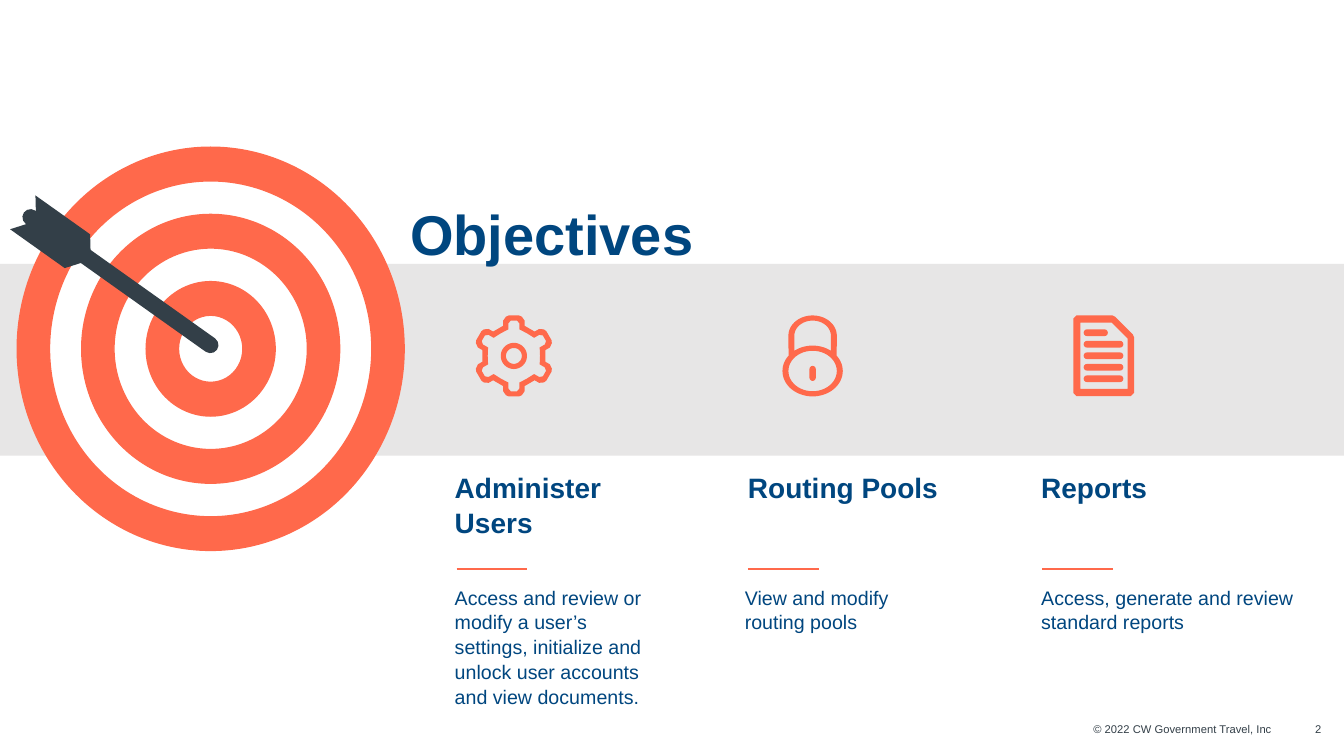
from dataclasses import dataclass
from math import cos, radians, sin

from lxml.etree import SubElement
from pptx import Presentation
from pptx.dml.color import RGBColor
from pptx.enum.shapes import MSO_CONNECTOR, MSO_SHAPE
from pptx.enum.text import PP_ALIGN
from pptx.oxml.ns import qn
from pptx.util import Cm, Pt


@dataclass(frozen=True)
class Theme:
    navy = RGBColor.from_string("00467F")
    coral = RGBColor.from_string("FF694B")
    slate = RGBColor.from_string("333F48")
    gray = RGBColor.from_string("E7E6E6")
    white = RGBColor.from_string("FFFFFF")
    font = "Arial"
    title = Pt(40)
    head = Pt(20)
    body = Pt(14)
    foot = Pt(8)


theme = Theme()
deck = Presentation()
deck.slide_width, deck.slide_height = Cm(33.87), Cm(19.05)
slide = deck.slides.add_slide(deck.slide_layouts[6])
shapes = slide.shapes


def write(text, left, top, width, height, size, color=theme.navy,
          bold=False, align=PP_ALIGN.LEFT, pitch=1.05):
    box = shapes.add_textbox(Cm(left), Cm(top), Cm(width), Cm(height))
    frame = box.text_frame
    frame.word_wrap = True
    frame.margin_left = frame.margin_right = 0
    frame.margin_top = frame.margin_bottom = 0
    para = frame.paragraphs[0]
    para.alignment = align
    para.line_spacing = pitch
    run = para.add_run()
    run.text = text
    run.font.name, run.font.size, run.font.bold = theme.font, size, bold
    run.font.color.rgb = color


def arc(mid_x, mid_y, wide, high, start, end):
    steps = 48
    turns = [radians(start + (end - start) * i / steps) for i in range(steps + 1)]
    return [(mid_x + wide * cos(t), mid_y + high * sin(t)) for t in turns]


# Footer
for text, left, width in [("© 2022 CW Government Travel, Inc", 21.29, 10.76),
                          ("2", 32.72, 0.58)]:
    write(text, left, 18.21, width, 0.36, theme.foot, theme.slate,
          align=PP_ALIGN.RIGHT, pitch=1)

# Preset parts: kind, left, top, width, height, fill, rim, adjustment, turn, flips
parts = [(MSO_SHAPE.RECTANGLE, 0, 6.65, 33.87, 4.83, theme.gray, None, None, 0, ())]

# Target rings, from the outside in
for ring in range(6, 0, -1):
    wide, high = 9.75 * ring / 6, 10.16 * ring / 6
    fill = theme.white if ring % 2 else theme.coral
    parts.append((MSO_SHAPE.OVAL, 5.31 - wide / 2, 8.79 - high / 2, wide, high,
                  fill, theme.coral, None, 0, ()))

# Arrow: shaft and two feathers
tilt = 35.4
parts += [
    (MSO_SHAPE.ROUNDED_RECTANGLE, 0.05, 6.88, 5.97, 0.41,
     theme.slate, None, 0.5, tilt, ()),
    (MSO_SHAPE.PARALLELOGRAM, 0.61, 5.46, 1.96, 0.36,
     theme.slate, None, 0.75, tilt, ("flipH",)),
    (MSO_SHAPE.PARALLELOGRAM, 0.18, 6.02, 1.96, 0.36,
     theme.slate, None, 0.75, tilt, ("flipH", "flipV")),
]

# Keyhole and the text bars of the report icon
pills = [(20.4, 9.22, 0.16, 0.38)]
pills += [(27.31, 8.3 + 0.29 * row, 1 if row else 0.61, 0.17) for row in range(5)]
parts += [(MSO_SHAPE.ROUNDED_RECTANGLE, *pill, theme.coral, None, 0.5, 0, ())
          for pill in pills]

for kind, left, top, width, height, fill, rim, bend, turn, flips in parts:
    part = shapes.add_shape(kind, Cm(left), Cm(top), Cm(width), Cm(height))
    part.shadow.inherit = False
    part.fill.solid()
    part.fill.fore_color.rgb = fill
    if rim:
        part.line.color.rgb = rim
        part.line.width = Pt(1)
    else:
        part.line.fill.background()
    if bend:
        part.adjustments[0] = bend
    part.rotation = turn
    for flip in flips:
        part.element.spPr.get_or_add_xfrm().set(flip, "1")

# Gear outline: one half tooth, mirrored, then turned six times
hub_x, hub_y = 12.95, 8.97
gear = []
for half in [[(-0.27, -0.76), (-0.27, -0.89), (-0.2, -0.99), (-0.13, -1.02)],
             [(-0.33, -0.57), (-0.14, -0.67), (-0.14, -0.82), (-0.08, -0.89)]]:
    tooth = half + [(-x, y) for x, y in reversed(half)]
    gear.append([(hub_x + x * cos(t) - y * sin(t), hub_y + x * sin(t) + y * cos(t))
                 for t in (radians(60 * i) for i in range(6)) for x, y in tooth])
gear += [arc(hub_x, hub_y, r, r, 0, 360) for r in (0.33, 0.2)]

# Lock: silhouette, gap under the shackle, face
lock_x = 20.48
lock = [
    arc(lock_x, 8.46, 0.61, 0.51, 180, 360) + arc(lock_x, 9.35, 0.76, 0.64, -37, 217),
    arc(lock_x, 8.46, 0.46, 0.38, 180, 360) + arc(lock_x, 9.35, 0.76, 0.64, -53, -127),
    arc(lock_x, 9.35, 0.61, 0.51, 0, 360),
]

# Report: sheet edge and inside
sheet = [
    [(27.13, 7.95), (28.04, 7.95), (28.1, 7.98), (28.55, 8.43), (28.58, 8.5),
     (28.58, 9.9), (28.5, 9.98), (27.13, 9.98), (27.05, 9.9), (27.05, 8.03)],
    [(27.23, 8.13), (28.02, 8.13), (28.42, 8.53), (28.42, 9.8), (27.23, 9.8)],
]

for icon in (gear, lock, sheet):
    loops = [[(Cm(x), Cm(y)) for x, y in loop] for loop in icon]
    pen = shapes.build_freeform(*loops[0][0])
    pen.add_line_segments(loops[0][1:], close=True)
    for loop in loops[1:]:
        pen.move_to(*loop[0])
        pen.add_line_segments(loop[1:], close=True)
    form = pen.convert_to_shape()
    form.shadow.inherit = False
    form.fill.solid()
    form.fill.fore_color.rgb = theme.coral
    form.line.fill.background()

# Title
write("Objectives", 10.34, 4.95, 9.96, 1.32, theme.title, bold=True)

# Columns: heading, its left and width, rule left, body, its left and width
columns = [
    ("Administer Users", 11.46, 5.7, 11.51,
     "Access and review or modify a user’s settings, initialize and unlock "
     "user accounts and view documents.", 11.46, 4.9),
    ("Routing Pools", 18.85, 5.51, 18.85,
     "View and modify routing pools", 18.77, 4.88),
    ("Reports", 26.24, 6.73, 26.26,
     "Access, generate and review standard reports", 26.24, 6.73),
]
for head, left, width, rule, body, start, span in columns:
    write(head, left, 11.81, width, 0.91, theme.head, bold=True)
    write(body, start, 14.73, span, 3.66, theme.body)
    line = shapes.add_connector(MSO_CONNECTOR.STRAIGHT, Cm(rule), Cm(14.33),
                                Cm(rule + 1.78), Cm(14.33))
    line.line.color.rgb = theme.coral
    line.line.width = Pt(1.5)
    SubElement(line.element.spPr, qn("a:effectLst"))

deck.save("out.pptx")
